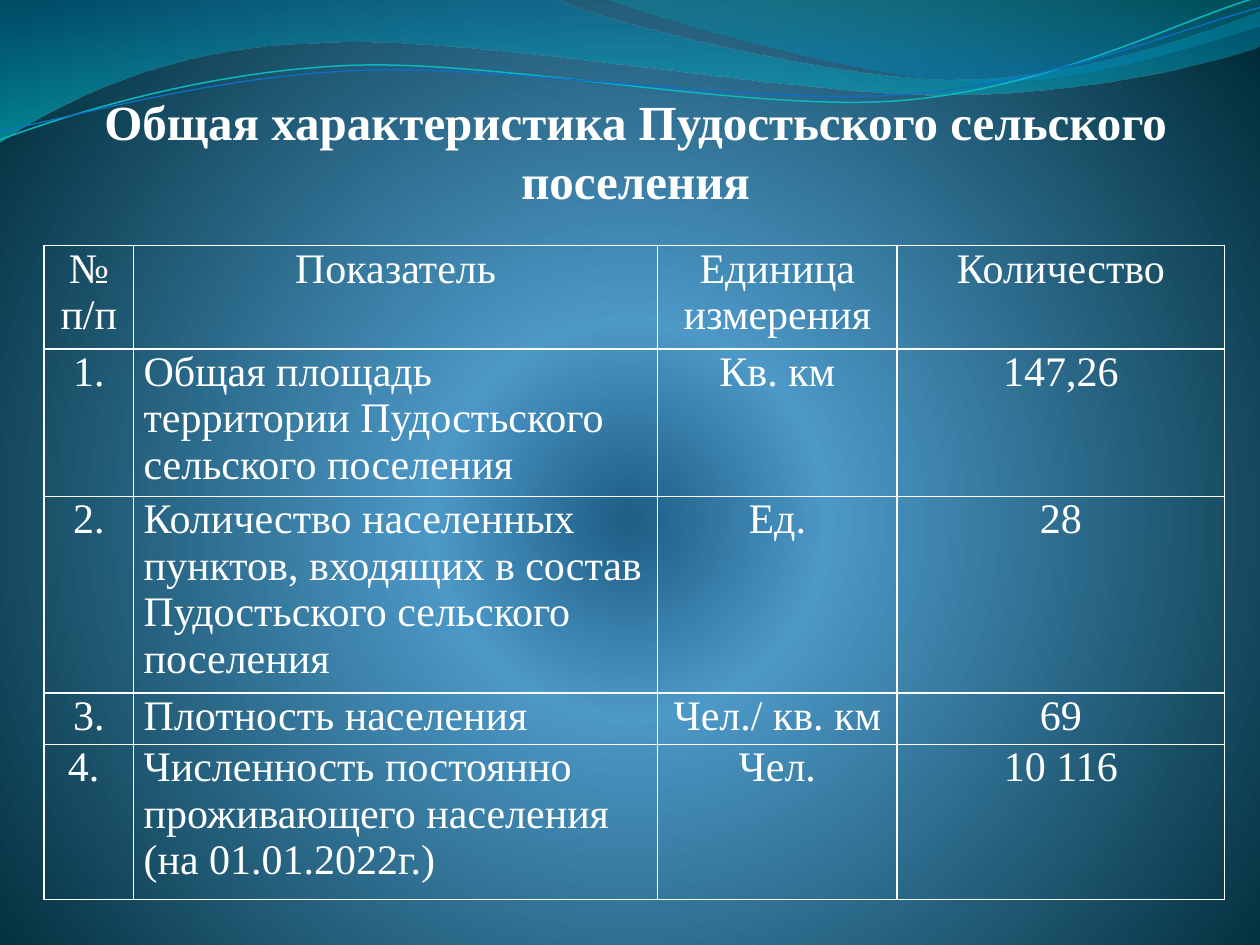
from lxml import etree
from pptx import Presentation
from pptx.dml.color import RGBColor as RGB
from pptx.enum.text import MSO_ANCHOR as Anchor, MSO_AUTO_SIZE as Fit, PP_ALIGN as Align
from pptx.oxml import parse_xml
from pptx.oxml.ns import nsdecls, qn
from pptx.util import Inches, Pt

WHITE = RGB(0xFF, 0xFF, 0xFF)
NAVY = RGB(0x1F, 0x60, 0x88)
SKY = RGB(0x4C, 0x98, 0xC7)
DARK = RGB(0x00, 0x2C, 0x38)
BLUE = RGB(0x00, 0x74, 0xA1)
AQUA = RGB(0x00, 0xC6, 0xCF)
TEAL = RGB(0x00, 0xA1, 0xA9)
AZURE = RGB(0x00, 0x8B, 0xBF)
CYAN = RGB(0x0A, 0xB8, 0xBF)
COBALT = RGB(0x0F, 0x6F, 0xC6)
FONT = "Times New Roman"

RADIAL = '<a:path path="circle"><a:fillToRect l="10000" t="110000" r="10000" b="100000"/></a:path>'
DOWN = '<a:lin ang="5400000" scaled="0"/>'

WAVE = [(0, 0), (4.4, -0.01),
        (4.76, 0.17, 6.64, 0.63, 7.58, 0.63), (8.53, 0.63, 9.58, 0.26, 10, 0.09),
        (10.01, 0.36),
        (9.83, 0.44, 8.7, 0.76, 7.46, 0.75), (6.22, 0.75, 3.82, 0.28, 2.57, 0.34),
        (1.29, 0.36, 0.46, 0.83, -0.01, 1.13)]
CREST = [(4.79, -0.01),
         (5.09, 0.11, 6.82, 0.62, 7.69, 0.65), (8.56, 0.69, 9.61, 0.32, 10, 0.21),
         (10, 0)]
UPPER = [(0, 1.11),
         (0.48, 0.93, 1.58, 0.57, 2.77, 0.52), (3.95, 0.47, 5.93, 0.89, 7.13, 0.8),
         (8.33, 0.71, 9.38, 0.15, 9.98, -0.02)]
LOWER = [(0, 1.04),
         (0.47, 0.96, 1.64, 0.61, 2.83, 0.56), (4.03, 0.51, 5.97, 0.84, 7.17, 0.75),
         (8.36, 0.67, 9.41, 0.21, 10, 0.06)]

COLS = [0.71, 4.16, 1.9, 2.6]
ROWS = [0.82, 1.17, 1.56, 0.41, 1.23]
DATA = [
    ("№ п/п", "Показатель", "Единица измерения", "Количество"),
    ("1.", "Общая площадь территории Пудостьского сельского поселения", "Кв. км", "147,26"),
    ("2.", "Количество населенных пунктов, входящих в состав Пудостьского сельского поселения",
     "Ед.", "28"),
    ("3.", "Плотность населения", "Чел./ кв. км", "69"),
    ("4. ", "Численность постоянно проживающего населения (на 01.01.2022г.)", "Чел.", "10 116"),
]


def set_grad(fill, parent, stops, shade):
    fill.solid()
    marks = "".join(
        f'<a:gs pos="{pos * 1000}"><a:srgbClr val="{tint}">'
        f'<a:alpha val="{alpha * 1000}"/></a:srgbClr></a:gs>'
        for pos, tint, alpha in stops)
    grad = parse_xml(f'<a:gradFill {nsdecls("a")} rotWithShape="1">'
                     f'<a:gsLst>{marks}</a:gsLst>{shade}</a:gradFill>')
    parent.replace(parent.find(qn("a:solidFill")), grad)


def bend(shape, path):
    lines = list(shape.element.iter(qn("a:lnTo")))
    for line, part in zip(lines, path[1:]):
        if len(part) == 2:
            continue
        curve = etree.Element(qn("a:cubicBezTo"))
        for x, y in zip(part[::2], part[1::2]):
            etree.SubElement(curve, qn("a:pt"), x=str(Inches(x) - shape.left),
                             y=str(Inches(y) - shape.top))
        line.getparent().replace(line, curve)


def add_path(slide, path, close):
    first, *rest = [tuple(map(Inches, part[-2:])) for part in path]
    form = slide.shapes.build_freeform(*first)
    form.add_line_segments(rest, close=close)
    shape = form.convert_to_shape()
    bend(shape, path)
    shape.shadow.inherit = False
    return shape


def add_wave(slide, path, stops):
    shape = add_path(slide, path, True)
    set_grad(shape.fill, shape.element.spPr, stops, DOWN)
    shape.line.fill.background()


def add_curve(slide, path, tint, width):
    shape = add_path(slide, path, False)
    shape.fill.background()
    shape.line.color.rgb = tint
    shape.line.width = Pt(width)


def set_font(para, size, bold, align):
    para.alignment = align
    for run in para.runs:
        run.font.name = FONT
        run.font.size = Pt(size)
        run.font.bold = bold
        run.font.color.rgb = WHITE


def set_title(slide, text):
    title = slide.shapes.title
    title.left, title.top = Inches(0.28), Inches(0.68)
    title.width, title.height = Inches(9.53), Inches(1.04)
    title.element.getparent().append(title.element)
    frame = title.text_frame
    frame.text = text
    frame.word_wrap = True
    frame.auto_size = Fit.NONE
    frame.vertical_anchor = Anchor.TOP
    set_font(frame.paragraphs[0], 28, True, Align.CENTER)


def set_edges(cell):
    props = cell._tc.get_or_add_tcPr()
    for side in ("lnL", "lnR", "lnT", "lnB"):
        edge = etree.SubElement(props, qn(f"a:{side}"), w=str(Pt(1)))
        paint = etree.SubElement(edge, qn("a:solidFill"))
        etree.SubElement(paint, qn("a:srgbClr"), val=str(WHITE))


def set_cell(cell, text, align):
    cell.text = text
    cell.margin_left = cell.margin_right = Inches(0.08)
    cell.margin_top = cell.margin_bottom = 0
    set_edges(cell)
    cell.fill.background()
    set_font(cell.text_frame.paragraphs[0], 24, False, align)


def add_grid(slide):
    table = slide.shapes.add_table(
        len(ROWS), len(COLS), Inches(0.35), Inches(1.95),
        Inches(sum(COLS)), Inches(sum(ROWS))).table
    table.first_row = table.horz_banding = False
    for col, width in zip(table.columns, COLS):
        col.width = Inches(width)
    for r, (row, height) in enumerate(zip(table.rows, ROWS)):
        row.height = Inches(height)
        for c, text in enumerate(DATA[r]):
            align = Align.LEFT if r and c == 1 else Align.CENTER
            set_cell(table.cell(r, c), text, align)


def main():
    deck = Presentation()
    deck.slide_width, deck.slide_height = Inches(10), Inches(7.5)
    slide = deck.slides.add_slide(deck.slide_layouts[5])
    fill = slide.background.fill
    fill.solid()
    back = slide.element.find(".//" + qn("p:bgPr"))
    set_grad(fill, back, [(1, NAVY, 100), (25, SKY, 100), (100, DARK, 100)], RADIAL)
    add_wave(slide, WAVE, [(0, BLUE, 45), (100, AQUA, 55)])
    add_wave(slide, CREST, [(0, TEAL, 30), (80, AZURE, 45)])
    add_curve(slide, UPPER, CYAN, 0.85)
    add_curve(slide, LOWER, COBALT, 0.75)
    add_grid(slide)
    set_title(slide, "Общая характеристика Пудостьского сельского поселения")
    deck.save("out.pptx")


if __name__ == "__main__":
    main()
